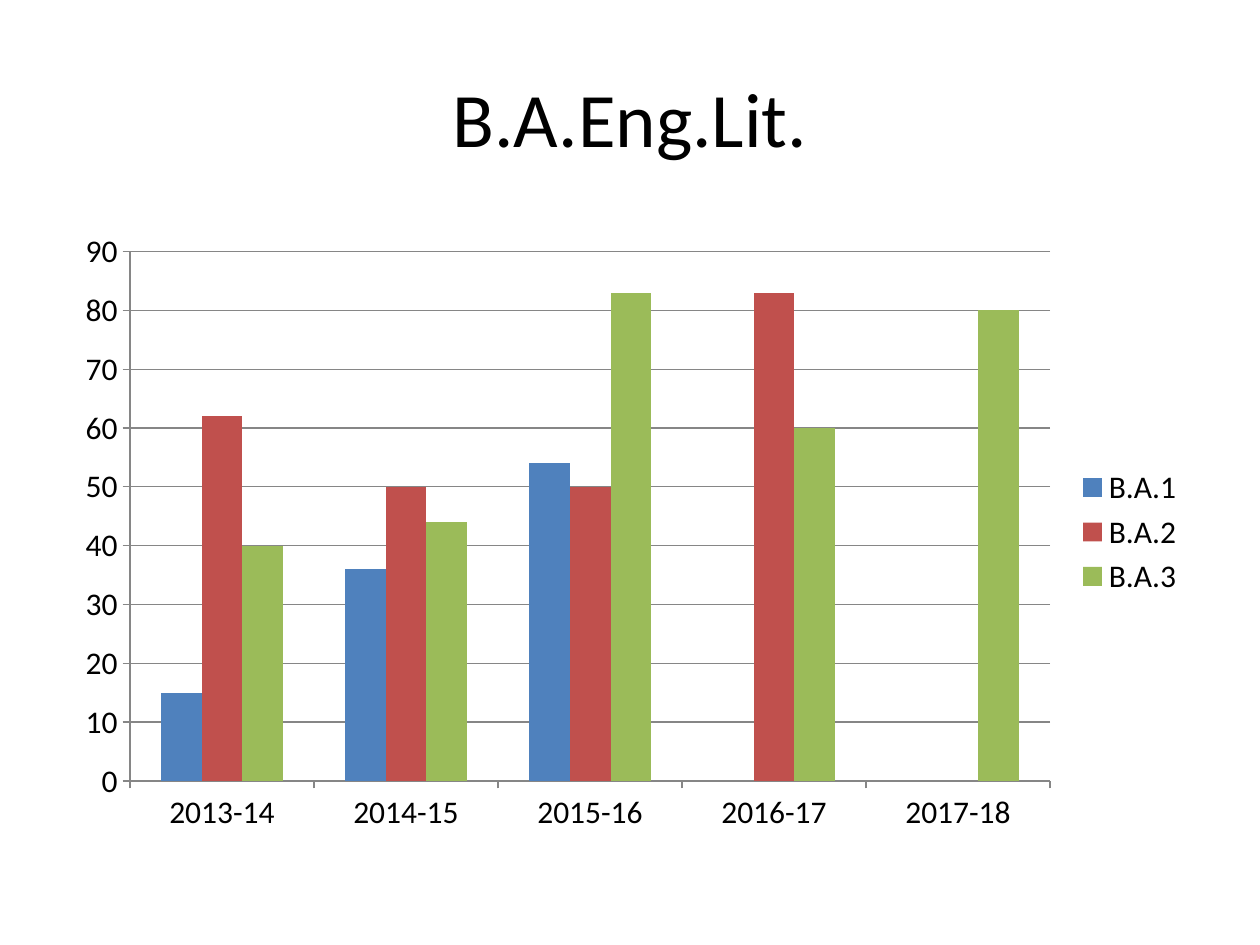
import pptx
import pptx.chart.data
import pptx.dml.color
import pptx.enum.chart
import pptx.enum.text
import pptx.util

RGBColor = pptx.dml.color.RGBColor
BLACK = RGBColor(0x00, 0x00, 0x00)
GRAY = RGBColor(0x86, 0x86, 0x86)
BLUE = RGBColor(0x4F, 0x81, 0xBD)
RED = RGBColor(0xC0, 0x50, 0x4D)
GREEN = RGBColor(0x9B, 0xBB, 0x59)
FONT = "Calibri"
PX_PER_INCH = 126

YEARS = ["2013-14", "2014-15", "2015-16", "2016-17", "2017-18"]
RESULTS = [
    ("B.A.1", BLUE, [15, 36, 54, None, None]),
    ("B.A.2", RED, [62, 50, 50, 83, None]),
    ("B.A.3", GREEN, [40, 44, 83, 60, 80]),
]


def px(n):
    return pptx.util.Emu(round(n * 914400 / PX_PER_INCH))


def set_font(font, size):
    font.name = FONT
    font.size = pptx.util.Pt(size)
    font.color.rgb = BLACK


def style_line(line):
    line.color.rgb = GRAY
    line.width = pptx.util.Pt(0.75)


def add_title(s, text, x, y, w, h):
    tf = s.shapes.add_textbox(px(x), px(y), px(w), px(h)).text_frame
    tf.word_wrap = True
    tf.vertical_anchor = pptx.enum.text.MSO_ANCHOR.MIDDLE
    p = tf.paragraphs[0]
    p.text = text
    p.alignment = pptx.enum.text.PP_ALIGN.CENTER
    set_font(p.font, 44)


def add_results_chart(s, x, y, w, h):
    data = pptx.chart.data.CategoryChartData()
    data.categories = YEARS
    for name, _, values in RESULTS:
        data.add_series(name, values)
    kind = pptx.enum.chart.XL_CHART_TYPE.COLUMN_CLUSTERED
    chart = s.shapes.add_chart(kind, px(x), px(y), px(w), px(h), data).chart
    set_font(chart.font, 18)
    chart.has_title = False
    chart.has_legend = True
    chart.legend.position = pptx.enum.chart.XL_LEGEND_POSITION.RIGHT
    chart.legend.include_in_layout = False

    plot = chart.plots[0]
    plot.gap_width = 150
    plot.vary_by_categories = False
    for series, (_, color, _) in zip(plot.series, RESULTS):
        series.format.fill.solid()
        series.format.fill.fore_color.rgb = color
        series.invert_if_negative = False

    for axis in (chart.category_axis, chart.value_axis):
        axis.major_tick_mark = pptx.enum.chart.XL_TICK_MARK.OUTSIDE
        axis.minor_tick_mark = pptx.enum.chart.XL_TICK_MARK.NONE
        style_line(axis.format.line)
    values = chart.value_axis
    values.minimum_scale = 0
    values.maximum_scale = 90
    values.major_unit = 10
    values.has_major_gridlines = True
    style_line(values.major_gridlines.format.line)


def main():
    prs = pptx.Presentation()
    prs.slide_width = px(1260)
    prs.slide_height = px(945)
    s = prs.slides.add_slide(prs.slide_layouts[6])
    add_title(s, "B.A.Eng.Lit.", 63, 38, 1134, 158)
    add_results_chart(s, 63, 220, 1134, 624)
    prs.save("out.pptx")


if __name__ == "__main__":
    main()
